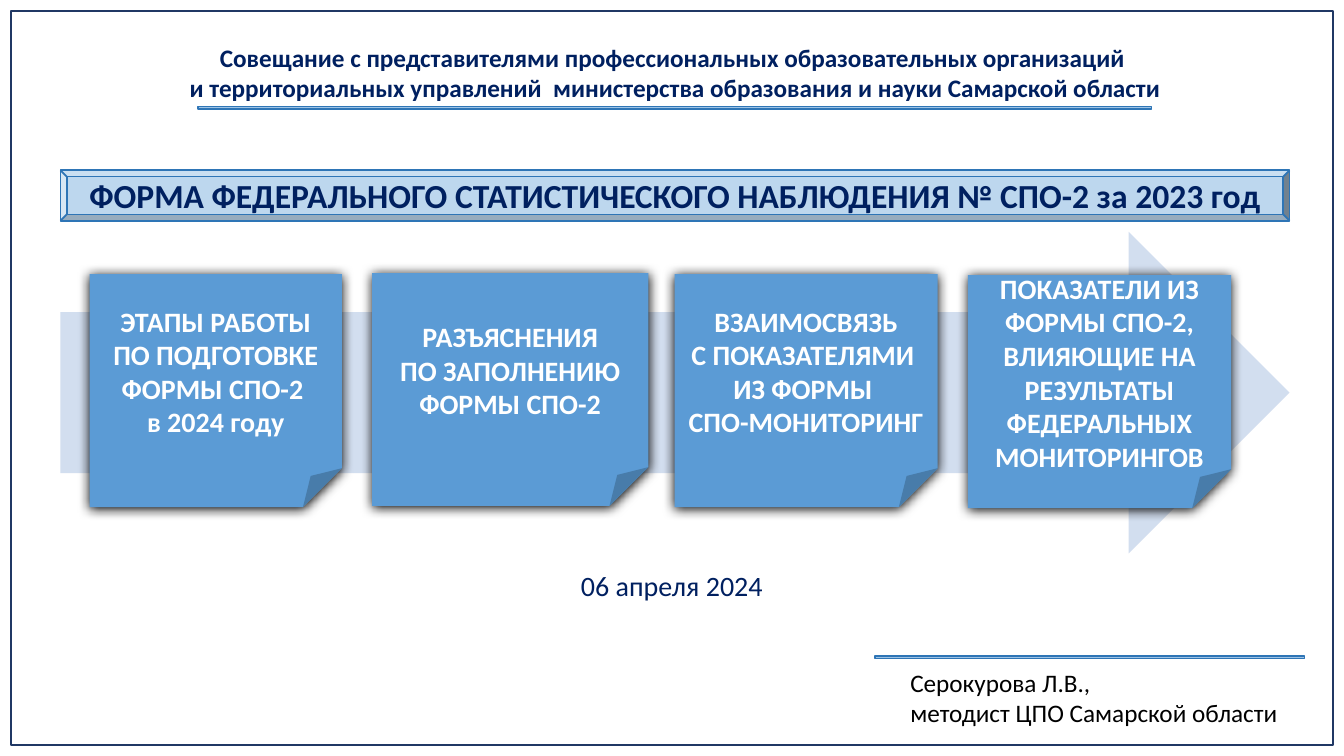
from dataclasses import dataclass

from lxml.etree import SubElement
from pptx import Presentation
from pptx.dml.color import RGBColor
from pptx.enum.shapes import MSO_SHAPE
from pptx.enum.text import MSO_ANCHOR, MSO_AUTO_SIZE, PP_ALIGN
from pptx.oxml.ns import qn
from pptx.shapes.autoshape import Shape
from pptx.slide import Slide
from pptx.text.text import TextFrame
from pptx.util import Inches, Pt


@dataclass(frozen=True)
class Theme:
    font: str = "Calibri"
    navy: str = "002060"
    frame: str = "203864"
    edge: str = "2E75B6"
    rule: str = "9DC3E6"
    banner: str = "BDD7EE"
    arrow: str = "D2DEEF"
    card: str = "5B9BD5"
    white: str = "FFFFFF"
    black: str = "000000"
    body_size: int = 18
    card_size: int = 20
    title_size: int = 24


@dataclass(frozen=True)
class Box:
    left: float
    top: float
    width: float
    height: float

    def lengths(self) -> list[int]:
        return [Inches(v) for v in (self.left, self.top, self.width, self.height)]


@dataclass(frozen=True)
class Figure:
    kind: MSO_SHAPE
    box: Box
    fill: str | None = None
    line: str | None = None
    line_width: float = 1


@dataclass(frozen=True)
class Caption:
    box: Box
    lines: tuple[str, ...]
    size: int
    color: str
    bold: bool = False
    align: PP_ALIGN = PP_ALIGN.CENTER
    wrap: bool = True


@dataclass(frozen=True)
class Card:
    left: float
    top: float
    width: float
    lines: tuple[str, ...]
    side_inset: float = 0.08


THEME = Theme()
CARD_HEIGHT = 2.31
CARD_INSET = 0.08

FRAME = Figure(MSO_SHAPE.RECTANGLE, Box(0.11, 0.11, 13.11, 7.28), None, THEME.frame, 1.5)
BANNER = Figure(MSO_SHAPE.BEVEL, Box(0.6, 1.69, 12.19, 0.5), THEME.banner, THEME.edge, 1.25)
RULES = [
    Figure(MSO_SHAPE.MATH_MINUS, box, THEME.rule, THEME.edge)
    for box in (Box(7.91, 6.47, 5.8, 0.1), Box(0.26, 1.02, 12.87, 0.1))
]
ARROW = Figure(MSO_SHAPE.RIGHT_ARROW, Box(0.6, 2.3, 12.19, 3.19), THEME.arrow)

BANNER_TEXT = ("ФОРМА ФЕДЕРАЛЬНОГО СТАТИСТИЧЕСКОГО НАБЛЮДЕНИЯ № СПО-2 за 2023 год",)
MEETING = Caption(
    Box(1.68, 0.37, 9.98, 0.71),
    ("Совещание с представителями профессиональных образовательных организаций",
     " и территориальных управлений  министерства образования и науки Самарской области"),
    THEME.body_size, THEME.navy, bold=True, wrap=False,
)
DATE = Caption(Box(4.1, 5.59, 5.13, 0.44), ("06 апреля 2024",), THEME.card_size, THEME.navy)
SPEAKER = Caption(
    Box(8.93, 6.57, 3.95, 0.71),
    ("Серокурова Л.В.,", "методист ЦПО Самарской области"),
    THEME.body_size, THEME.black, align=PP_ALIGN.LEFT,
)
CARDS = [
    Card(0.89, 2.72, 2.5, ("ЭТАПЫ РАБОТЫ", "ПО ПОДГОТОВКЕ ФОРМЫ СПО-2 ", "в 2024 году")),
    Card(3.69, 2.71, 2.74, ("РАЗЪЯСНЕНИЯ", "ПО ЗАПОЛНЕНИЮ", "ФОРМЫ СПО-2")),
    Card(6.69, 2.72, 2.61,
         ("ВЗАИМОСВЯЗЬ", "С ПОКАЗАТЕЛЯМИ \nИЗ ФОРМЫ ", "СПО-МОНИТОРИНГ"), side_inset=0),
    Card(9.6, 2.73, 2.61,
         ("ПОКАЗАТЕЛИ ИЗ ФОРМЫ СПО-2, ВЛИЯЮЩИЕ НА РЕЗУЛЬТАТЫ ФЕДЕРАЛЬНЫХ МОНИТОРИНГОВ",)),
]


def write_lines(frame: TextFrame, lines: tuple[str, ...], size: int, color: str,
                bold: bool, align: PP_ALIGN = PP_ALIGN.CENTER) -> None:
    font_format = {"name": THEME.font, "size": Pt(size), "bold": bold}
    for index, line in enumerate(lines):
        paragraph = frame.add_paragraph() if index else frame.paragraphs[0]
        paragraph.text = line
        paragraph.alignment = align
        for run in paragraph.runs:
            for name, value in font_format.items():
                setattr(run.font, name, value)
            run.font.color.rgb = RGBColor.from_string(color)


def draw_figure(slide: Slide, figure: Figure) -> Shape:
    shape = slide.shapes.add_shape(figure.kind, *figure.box.lengths())
    shape.shadow.inherit = False
    if figure.fill:
        shape.fill.solid()
        shape.fill.fore_color.rgb = RGBColor.from_string(figure.fill)
    else:
        shape.fill.background()
    if figure.line:
        shape.line.color.rgb = RGBColor.from_string(figure.line)
        shape.line.width = Pt(figure.line_width)
    else:
        shape.line.fill.background()
    return shape


def draw_caption(slide: Slide, caption: Caption) -> None:
    frame = slide.shapes.add_textbox(*caption.box.lengths()).text_frame
    frame.word_wrap = caption.wrap
    frame.auto_size = MSO_AUTO_SIZE.SHAPE_TO_FIT_TEXT
    write_lines(frame, caption.lines, caption.size, caption.color, caption.bold, caption.align)


def cast_shadow(shape: Shape) -> None:
    """Fill the empty effect list with a soft shadow that falls straight down."""
    effects = shape.element.spPr.find(qn("a:effectLst"))
    shadow = SubElement(effects, qn("a:outerShdw"), blurRad=str(Pt(8.5)), dist=str(Pt(1)),
                        dir=str(90 * 60000), algn="ctr", rotWithShape="0")
    SubElement(shadow, qn("a:srgbClr"), val=THEME.black)


def draw_card(slide: Slide, card: Card) -> None:
    box = Box(card.left, card.top, card.width, CARD_HEIGHT)
    shape = draw_figure(slide, Figure(MSO_SHAPE.FOLDED_CORNER, box, THEME.card))
    cast_shadow(shape)
    frame_format = {
        "word_wrap": True,
        "vertical_anchor": MSO_ANCHOR.MIDDLE,
        "margin_left": Inches(card.side_inset),
        "margin_right": Inches(card.side_inset),
        "margin_top": Inches(CARD_INSET),
        "margin_bottom": Inches(CARD_INSET),
    }
    for name, value in frame_format.items():
        setattr(shape.text_frame, name, value)
    write_lines(shape.text_frame, card.lines, THEME.card_size, THEME.white, bold=True)


def main() -> None:
    deck = Presentation()
    deck.slide_width, deck.slide_height = Inches(13.33), Inches(7.5)
    slide = deck.slides.add_slide(deck.slide_layouts[6])

    draw_figure(slide, FRAME)
    draw_caption(slide, MEETING)
    banner = draw_figure(slide, BANNER)
    write_lines(banner.text_frame, BANNER_TEXT, THEME.title_size, THEME.navy, bold=True)
    for caption in (DATE, SPEAKER):
        draw_caption(slide, caption)
    for figure in (*RULES, ARROW):
        draw_figure(slide, figure)
    for card in CARDS:
        draw_card(slide, card)

    deck.save("out.pptx")


if __name__ == "__main__":
    main()
